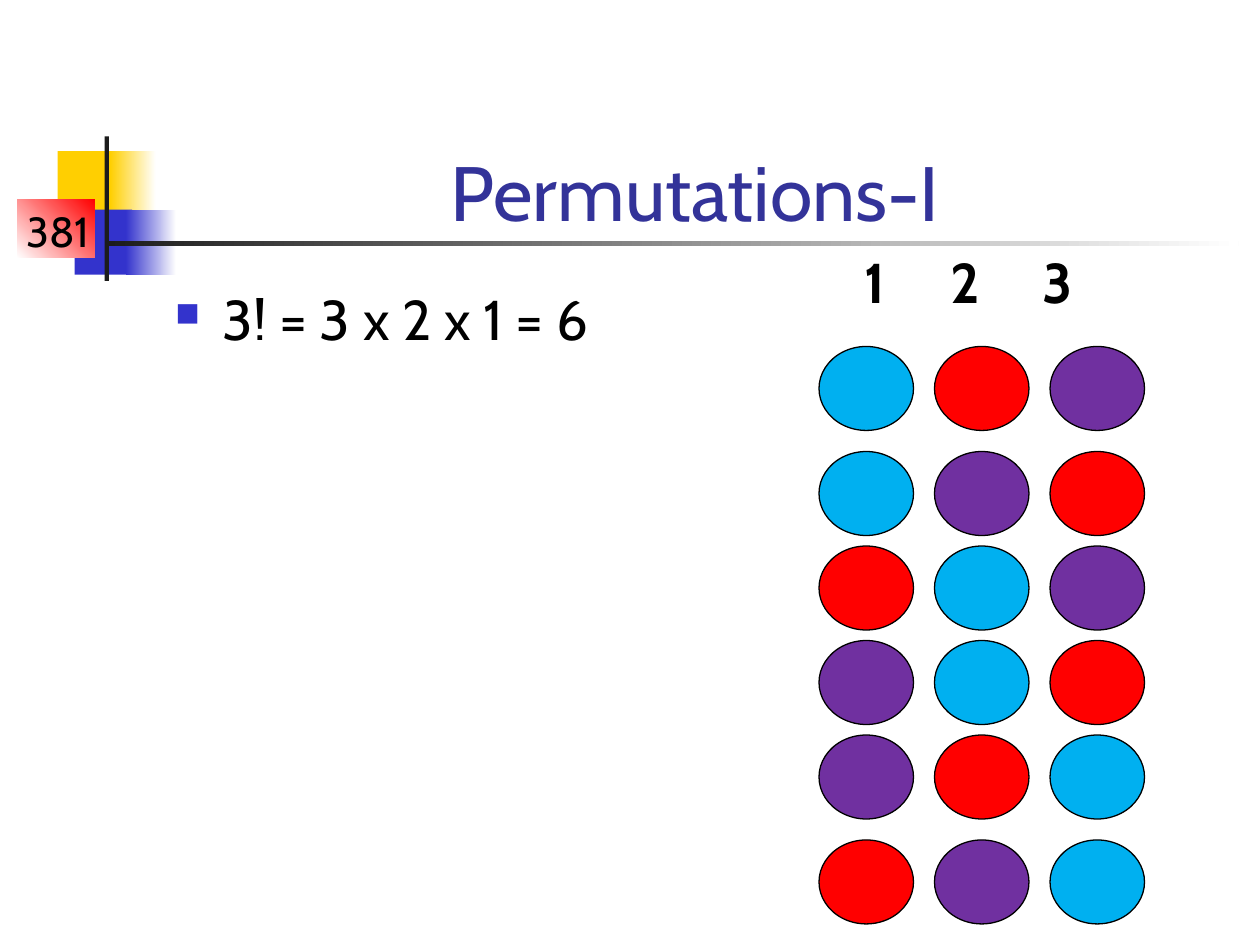
"""Build a slide listing the six orderings of three coloured balls."""
from lxml import etree
from pptx import Presentation
from pptx.dml import color
from pptx.enum import shapes, text
from pptx.oxml import ns
from pptx.util import Pt

FONT = "Cabin"
BALLS = {"B": "00B0F0", "R": "FF0000", "P": "7030A0"}
ORDERS = {198: "BRP", 258: "BPR", 312: "RBP", 366: "PBR", 420: "PRB", 480: "RPB"}
BALL_LEFT, BALL_STEP, BALL_W, BALL_H = 468, 66, 54, 48
HEADER_TABS = (49, 101.5)

DECOR = [
    ((33, 86.4, 34.8, 37.2), ["FFCF01"], 0),
    ((63, 86.4, 26, 37.2), ["FFCF01", "FFFFFF"], 0),
    ((42.6, 119.8, 33, 37.2), ["3333CC"], 0),
    ((72, 119.8, 28.8, 37.2), ["3333CC", "FFFFFF"], 0),
    ((9.8, 113.8, 44.4, 33.4), ["FFFFFF", "FF0000"], 45),
    ((59.8, 78, 2.4, 82.6), ["1C1C1C"], 0),
    ((59.8, 138, 648, 2.5), ["1C1C1C", "FFFFFF"], 0),
]

CENTER = {"alignment": text.PP_ALIGN.CENTER}
TEXTS = {
    "number": dict(words="381", box=(6, 113.8, 54, 36), size=24, para=CENTER),
    "body": dict(words="3! = 3 x 2 x 1 = 6", box=(93, 159, 300, 324), size=32,
                 para={"space_before": Pt(6.4)}),
    "header": dict(words="1\t2\t3", box=(468, 138, 186, 46), size=32, bold=True,
                   frame={"margin_left": Pt(26)}),
    "title": dict(words="Permutations-I", box=(90.6, 49, 613.4, 90), size=44,
                  tint="333399", para=CENTER,
                  frame={"vertical_anchor": text.MSO_ANCHOR.BOTTOM}),
}


def rgb(code):
    return color.RGBColor.from_string(code)


def assign(obj, values):
    for name, value in values.items():
        setattr(obj, name, value)


def add_shape(s, kind, box, fills, angle=0, line=None):
    sp = s.shapes.add_shape(kind, *map(Pt, box))
    sp.shadow.inherit = False
    if len(fills) == 1:
        sp.fill.solid()
        sp.fill.fore_color.rgb = rgb(fills[0])
    else:
        sp.fill.gradient()
        sp.fill.gradient_angle = angle
        for stop, code in zip(sp.fill.gradient_stops, fills):
            stop.color.rgb = rgb(code)
    if line:
        sp.line.color.rgb = rgb(line)
        sp.line.width = Pt(0.75)
    else:
        sp.line.fill.background()


def add_text(s, words, box, size, tint="000000", bold=False, para={}, frame={}):
    tf = s.shapes.add_textbox(*map(Pt, box)).text_frame
    assign(tf, {"word_wrap": True, **frame})
    p = tf.paragraphs[0]
    assign(p, para)
    r = p.add_run()
    r.text = words
    assign(r.font, {"name": FONT, "size": Pt(size), "bold": bold})
    r.font.color.rgb = rgb(tint)
    return p


def add_child(parent, tag, **attrs):
    values = {name: str(value) for name, value in attrs.items()}
    return etree.SubElement(parent, ns.qn(tag), values)


def add_bullet(p, char, tint, percent, indent):
    pr = p._p.get_or_add_pPr()
    pr.set("marL", str(Pt(indent)))
    pr.set("indent", str(-Pt(indent)))
    add_child(add_child(pr, "a:buClr"), "a:srgbClr", val=tint)
    add_child(pr, "a:buSzPct", val=percent * 1000)
    add_child(pr, "a:buChar", char=char)


def add_tabs(p, stops):
    tabs = add_child(p._p.get_or_add_pPr(), "a:tabLst")
    for stop in stops:
        add_child(tabs, "a:tab", pos=Pt(stop), algn="l")


def main():
    prs = Presentation()
    assign(prs, {"slide_width": Pt(720), "slide_height": Pt(540)})
    s = prs.slides.add_slide(prs.slide_layouts[6])
    kinds = shapes.MSO_SHAPE
    for box, fills, angle in DECOR:
        add_shape(s, kinds.RECTANGLE, box, fills, angle)
    for top, order in ORDERS.items():
        for col, ball in enumerate(order):
            box = (BALL_LEFT + col * BALL_STEP, top, BALL_W, BALL_H)
            add_shape(s, kinds.OVAL, box, [BALLS[ball]], line="000000")
    paras = {name: add_text(s, **item) for name, item in TEXTS.items()}
    add_bullet(paras["body"], "■", "3333CC", 60, 27)
    add_tabs(paras["header"], HEADER_TABS)
    prs.save("out.pptx")


if __name__ == "__main__":
    main()
